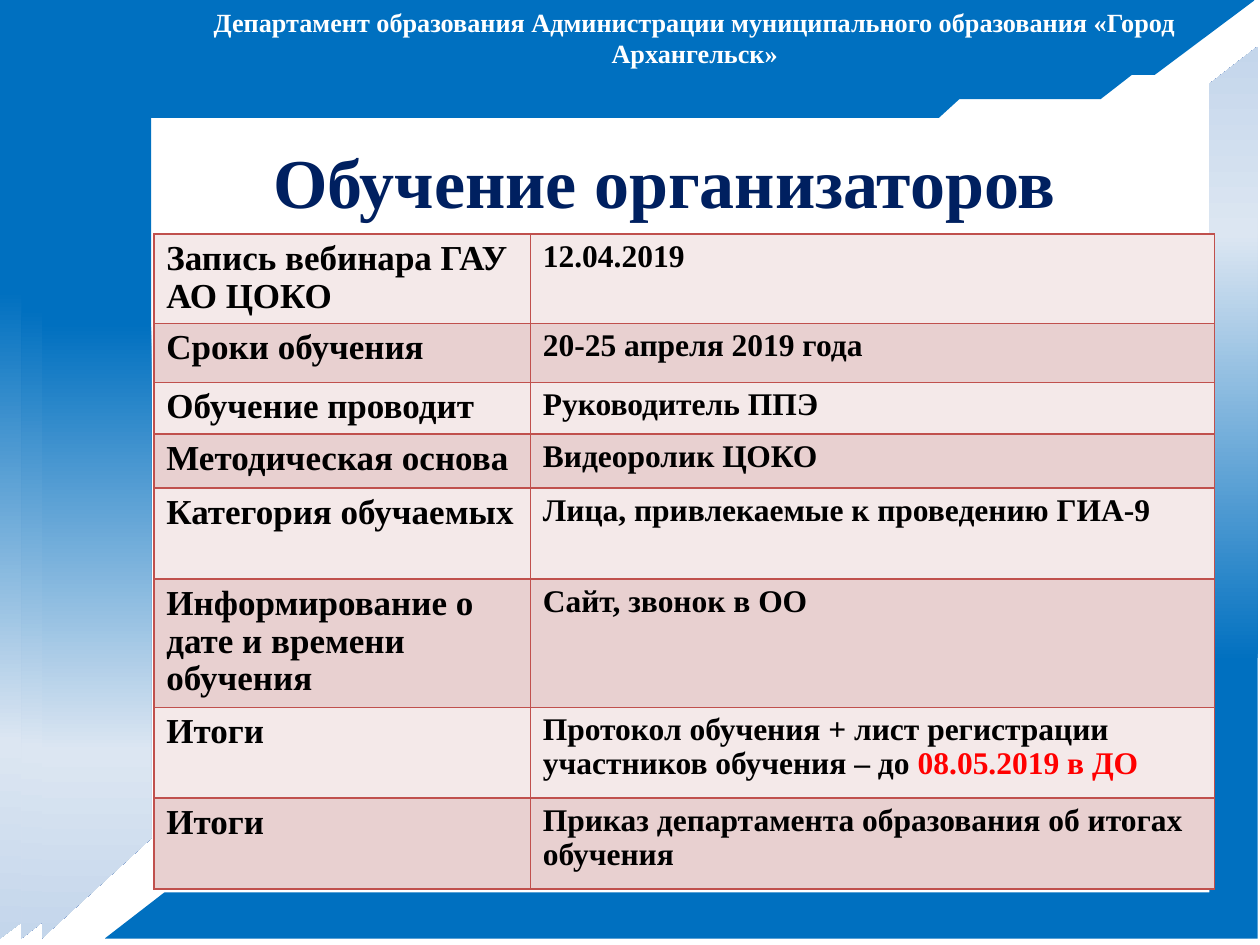
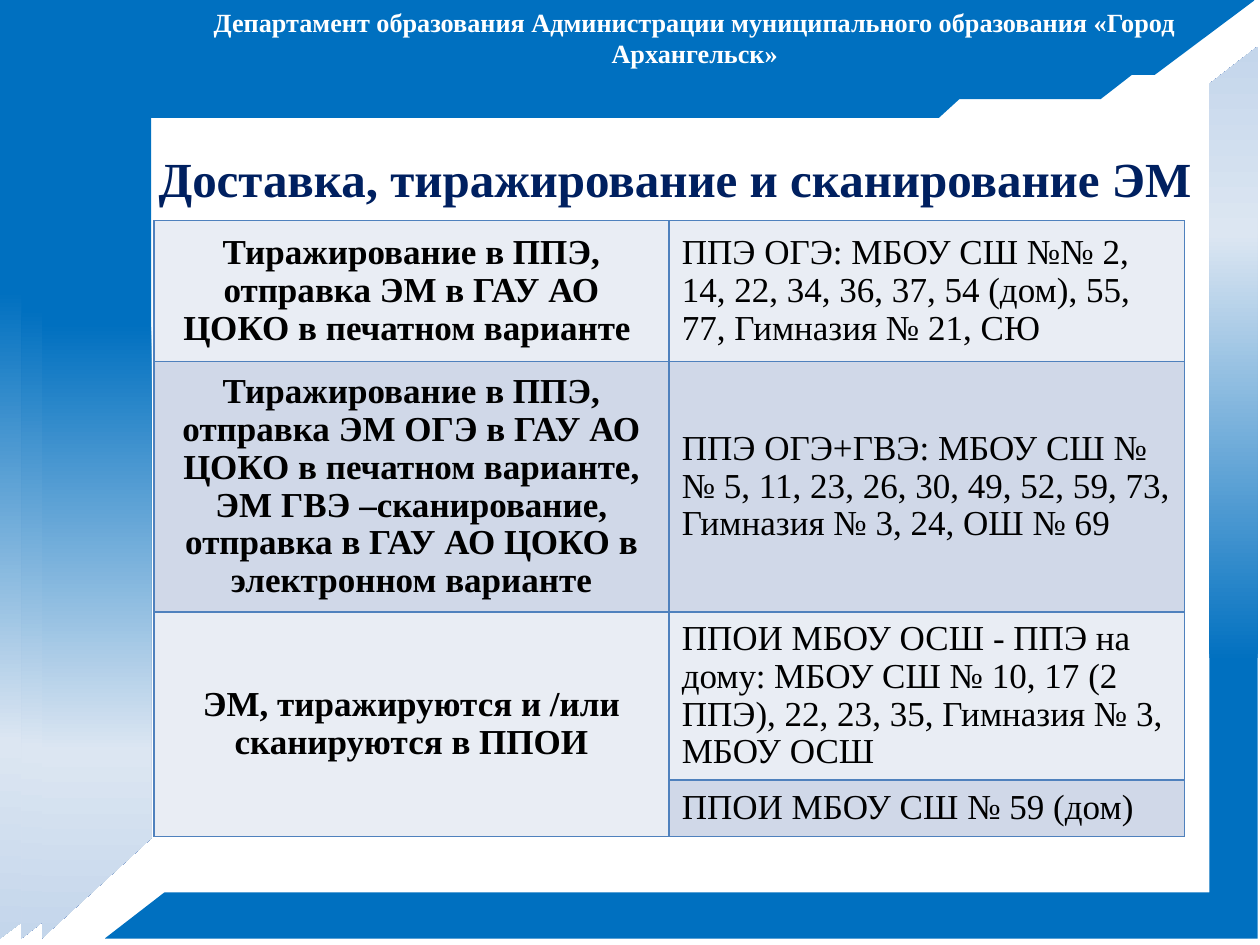
"""Builds two slides about training organisers and handling exam materials."""
from lxml import etree
from pptx import Presentation
from pptx import util as u
from pptx.dml.color import RGBColor
from pptx.enum import shapes, text
from pptx.oxml import ns

COLOURS = {
    "frame": "0070C0", "frame_pale": "DCE6F2", "frame_end": "C4D6EB",
    "title": "002060", "white": "FFFFFF", "ink": "000000", "alert": "FF0000",
    "rose_line": "C0504D", "rose_light": "F4E9E9", "rose_dark": "E8D0D0",
    "blue_line": "4F81BD", "blue_light": "E9EDF4", "blue_dark": "D0D8E8",
}
FONT = "Times New Roman"
GRADIENT = ((31, "frame"), (79, "frame_pale"), (100, "frame_end"))
HEADER = ("Департамент образования Администрации муниципального "
          "образования «Город Архангельск»")
FRAMES = (
    ((0, 0, 25.3, 18.92), (1.51, 3.03), 0),
    ((0.43, 0.53, 23.65, 18.39), (1.47, 2.06), 0),
    ((0.84, 0.94, 19.66, 17.98), (1.44, 2.21), 0),
    ((2.11, 0.94, 23.24, 17.98), (0.93, 0.97), 180),
)
TRAINING = (
    ("Запись вебинара ГАУ АО ЦОКО", "12.04.2019"),
    ("Сроки обучения", "20-25 апреля 2019 года"),
    ("Обучение проводит", "Руководитель ППЭ"),
    ("Методическая основа", "Видеоролик ЦОКО"),
    ("Категория обучаемых", "Лица, привлекаемые к проведению ГИА-9"),
    ("Информирование о дате и времени обучения", "Сайт, звонок в ОО"),
    ("Итоги", "Протокол обучения + лист регистрации участников обучения – до ",
     "08.05.2019 в ДО"),
    ("Итоги", "Приказ департамента образования об итогах обучения"),
)
DELIVERY = (
    ("Тиражирование в ППЭ, отправка ЭМ в ГАУ АО ЦОКО в печатном варианте ",
     "ППЭ ОГЭ: МБОУ СШ №№ 2, 14, 22, 34, 36, 37, 54 (дом), 55, 77, "
     "Гимназия № 21, СЮ"),
    ("Тиражирование в ППЭ, отправка ЭМ ОГЭ в ГАУ АО ЦОКО в печатном варианте, "
     "ЭМ ГВЭ –сканирование, отправка в ГАУ АО ЦОКО в электронном варианте",
     "ППЭ ОГЭ+ГВЭ: МБОУ СШ №№ 5, 11, 23, 26, 30, 49, 52, 59, 73, "
     "Гимназия № 3, 24, ОШ № 69"),
    ("ЭМ, тиражируются и /или сканируются в ППОИ",
     "ППОИ МБОУ ОСШ - ППЭ на дому: МБОУ СШ № 10, 17 (2 ППЭ), 22, 23, 35, "
     "Гимназия № 3, МБОУ ОСШ"),
    ("", "ППОИ МБОУ СШ № 59 (дом)"),
)


def set_values(target, values):
    """Set each attribute of the target from a dict."""
    for name, value in values.items():
        setattr(target, name, value)


def colour(name):
    """Return a named colour."""
    return RGBColor.from_string(COLOURS[name])


def add_run(paragraph, words, size, ink, bold=True):
    """Add one formatted run to a paragraph."""
    run = paragraph.add_run()
    run.text = words
    set_values(run.font, {"name": FONT, "size": u.Pt(size), "bold": bold})
    run.font.color.rgb = colour(ink)


def fill_gradient(shape):
    """Fill a shape with the vertical frame gradient."""
    shape.fill.background()
    properties = shape._element.spPr
    old_fill = properties.find(ns.qn("a:noFill"))
    gradient = etree.Element(ns.qn("a:gradFill"), rotWithShape="1")
    stops = etree.SubElement(gradient, ns.qn("a:gsLst"))
    for position, name in GRADIENT:
        stop = etree.SubElement(stops, ns.qn("a:gs"), pos=str(position * 1000))
        etree.SubElement(stop, ns.qn("a:srgbClr"), val=COLOURS[name])
    etree.SubElement(gradient, ns.qn("a:lin"), ang="5400000", scaled="0")
    properties.replace(old_fill, gradient)


def add_frame(slide, box, thicknesses, rotation):
    """Add a half frame with its top and left thickness in centimetres."""
    shape = slide.shapes.add_shape(shapes.MSO_SHAPE.HALF_FRAME, *map(u.Cm, box))
    for index, thickness in enumerate(thicknesses):
        shape.adjustments[index] = thickness / box[3]
    shape.rotation = rotation
    shape.shadow.inherit = False
    shape.line.fill.background()
    fill_gradient(shape)
    return shape


def add_header(slide):
    """Add the department name across the top band."""
    shape = slide.shapes.add_textbox(*map(u.Cm, (2.41, 0, 23.19, 0.89)))
    set_values(shape.text_frame, {
        "word_wrap": True, "auto_size": text.MSO_AUTO_SIZE.SHAPE_TO_FIT_TEXT})
    paragraph = shape.text_frame.paragraphs[0]
    paragraph.alignment = text.PP_ALIGN.CENTER
    add_run(paragraph, HEADER, 15, "white")
    return shape


def decorate_layout(layout, slide):
    """Move the shared frames and header behind the layout placeholders."""
    decorations = [add_frame(slide, *frame) for frame in FRAMES]
    decorations.append(add_header(slide))
    for index, shape in enumerate(decorations):
        layout.shapes._spTree.insert(2 + index, shape._element)


def set_title(slide, words, box, size):
    """Place and format the slide title."""
    title = slide.shapes.title
    set_values(title, dict(zip(("left", "top", "width", "height"), map(u.Cm, box))))
    set_values(title.text_frame, {
        "auto_size": text.MSO_AUTO_SIZE.NONE, "word_wrap": True,
        "vertical_anchor": text.MSO_ANCHOR.TOP, "margin_top": u.Cm(0.28),
        "margin_left": 0, "margin_right": 0, "margin_bottom": 0})
    paragraph = title.text_frame.paragraphs[0]
    paragraph.alignment = text.PP_ALIGN.CENTER
    add_run(paragraph, words, size, "title")


def set_borders(cell, name):
    """Draw a one-point border on each side of a cell."""
    properties = cell._tc.get_or_add_tcPr()
    for side in ("lnL", "lnR", "lnT", "lnB"):
        line = etree.SubElement(properties, ns.qn(f"a:{side}"), w=str(u.Pt(1)))
        fill = etree.SubElement(line, ns.qn("a:solidFill"))
        etree.SubElement(fill, ns.qn("a:srgbClr"), val=COLOURS[name])


def add_table(slide, rows, top, widths, heights, theme, columns, anchor):
    """Add a banded two-column table; columns hold size, bold and alignment."""
    frame = slide.shapes.add_table(
        len(rows), len(widths), u.Cm(3.1), u.Cm(top),
        u.Cm(sum(widths)), u.Cm(sum(heights)))
    table = frame.table
    set_values(table, {"first_row": False, "horz_banding": False})
    for column, width in zip(table.columns, widths):
        column.width = u.Cm(width)
    for index, (row, height, words) in enumerate(zip(table.rows, heights, rows)):
        row.height = u.Cm(height)
        band = f"{theme}_{'dark' if index % 2 else 'light'}"
        label, value, *alerts = words
        for cell, content, (size, bold, alignment) in zip(
                row.cells, (label, value), columns):
            set_borders(cell, f"{theme}_line")
            cell.fill.solid()
            cell.fill.fore_color.rgb = colour(band)
            cell.vertical_anchor = anchor
            paragraph = cell.text_frame.paragraphs[0]
            set_values(paragraph, {"alignment": alignment, "line_spacing": 0.97})
            if content:
                add_run(paragraph, content, size, "ink", bold)
        for alert in alerts:
            add_run(paragraph, alert, size, "alert", bold)
    return table


def main():
    """Build and save the presentation."""
    presentation = Presentation()
    set_values(presentation, {"slide_width": u.Cm(25.4), "slide_height": u.Cm(19.05)})
    layout = presentation.slide_layouts[5]
    left, center = text.PP_ALIGN.LEFT, text.PP_ALIGN.CENTER

    training = presentation.slides.add_slide(layout)
    decorate_layout(layout, training)
    set_title(training, "Обучение организаторов", (1.96, 2.51, 22.86, 1.8), 40)
    add_table(training, TRAINING, 4.72, (7.59, 13.79),
              (1.8, 1.19, 1.04, 1.09, 1.83, 2.59, 1.83, 1.83), "rose",
              ((20, True, left), (18, True, left)), text.MSO_ANCHOR.TOP)

    delivery = presentation.slides.add_slide(layout)
    set_title(delivery, "Доставка, тиражирование и сканирование ЭМ",
              (2.9, 2.72, 21.41, 2.01), 28)
    table = add_table(delivery, DELIVERY, 4.45, (10.39, 10.39),
                      (2.84, 5.05, 3.38, 1.14), "blue",
                      ((20, True, center), (20, False, left)),
                      text.MSO_ANCHOR.MIDDLE)
    table.cell(2, 0).merge(table.cell(3, 0))

    presentation.save("out.pptx")


if __name__ == "__main__":
    main()
